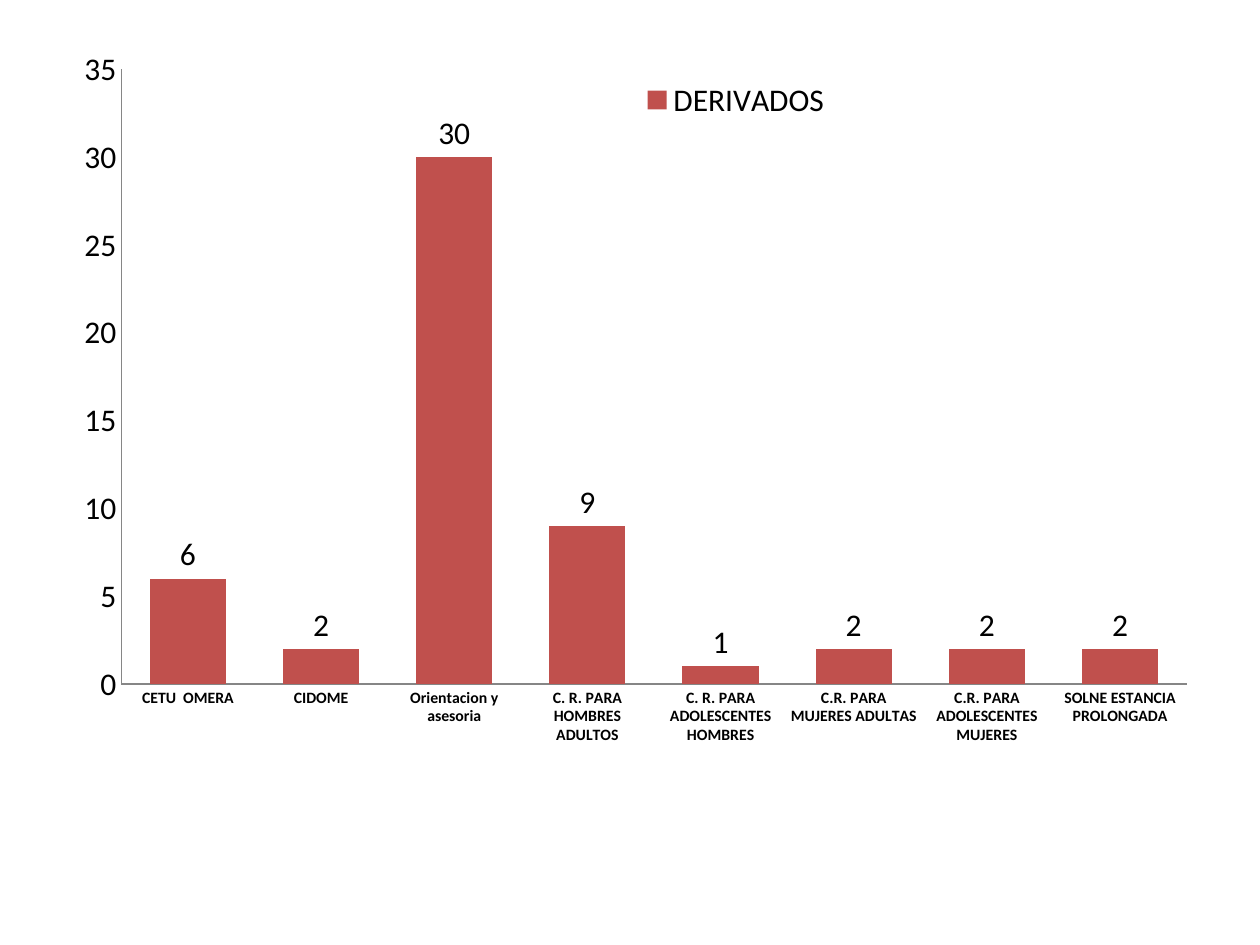
from pptx import Presentation
from pptx.chart.data import CategoryChartData as ChartData
from pptx.dml.color import RGBColor as RGB
from pptx.enum.chart import XL_CHART_TYPE as ChartType
from pptx.enum.chart import XL_LABEL_POSITION as LabelPos
from pptx.enum.chart import XL_LEGEND_POSITION as LegendPos
from pptx.enum.chart import XL_TICK_MARK as TickMark
from pptx.oxml import parse_xml
from pptx.oxml.ns import nsdecls, qn
from pptx.util import Pt

COLORS = {"text": "000000", "bar": "C0504D", "axis": "868686"}

REFERRALS = {
    "CETU  OMERA": 6,
    "CIDOME": 2,
    "Orientacion y asesoria": 30,
    "C. R. PARA HOMBRES ADULTOS": 9,
    "C. R. PARA ADOLESCENTES HOMBRES": 1,
    "C.R. PARA MUJERES ADULTAS": 2,
    "C.R. PARA ADOLESCENTES MUJERES": 2,
    "SOLNE ESTANCIA PROLONGADA": 2,
}


def manual_layout(box, inner=False):
    """Return a c:layout element for x, y, w, h as shares of the chart."""
    target = '<c:layoutTarget val="inner"/>' if inner else ""
    modes = '<c:xMode val="edge"/><c:yMode val="edge"/>'
    sizes = "".join(f'<c:{k} val="{v}"/>' for k, v in zip("xywh", box))
    return parse_xml(f"<c:layout {nsdecls('c')}><c:manualLayout>"
                     f"{target}{modes}{sizes}</c:manualLayout></c:layout>")


class Deck:
    font = "Calibri"
    size = 18

    def __init__(self, width, height):
        self.prs = Presentation()
        self.prs.slide_width, self.prs.slide_height = Pt(width), Pt(height)
        self.slide = None

    def add_slide(self):
        self.slide = self.prs.slides.add_slide(self.prs.slide_layouts[6])

    def style_font(self, font, size, bold=False):
        font.name, font.size, font.bold = self.font, Pt(size), bold
        font.color.rgb = RGB.from_string(COLORS["text"])

    def style_axis(self, axis, size, bold=False):
        axis.has_major_gridlines = False
        axis.major_tick_mark = axis.minor_tick_mark = TickMark.NONE
        axis.format.line.color.rgb = RGB.from_string(COLORS["axis"])
        self.style_font(axis.tick_labels.font, size, bold)

    def place(self, parent, index, box, inner=False):
        for old in parent.findall(qn("c:layout")):
            parent.remove(old)
        parent.insert(index, manual_layout(box, inner))

    def column_chart(self, name, values, box, plot_box, legend_box):
        data = ChartData()
        data.categories = list(values)
        data.add_series(name, list(values.values()))
        chart = self.slide.shapes.add_chart(
            ChartType.COLUMN_CLUSTERED, *map(Pt, box), data).chart
        chart.has_title = False
        self.style_font(chart.font, self.size)

        # Columns and their values
        plot = chart.plots[0]
        plot.gap_width = 75
        plot.vary_by_categories = False
        fill = plot.series[0].format.fill
        fill.solid()
        fill.fore_color.rgb = RGB.from_string(COLORS["bar"])
        plot.has_data_labels = True
        labels = plot.data_labels
        labels.show_value = True
        labels.position = LabelPos.OUTSIDE_END
        self.style_font(labels.font, self.size)

        # Axes
        self.style_axis(chart.category_axis, 9, bold=True)
        self.style_axis(chart.value_axis, self.size)
        chart.value_axis.minimum_scale = 0
        chart.value_axis.maximum_scale = 35
        chart.value_axis.major_unit = 5

        # Legend and plot positions
        chart.has_legend = True
        legend = chart.legend
        legend.position = LegendPos.BOTTOM
        legend.include_in_layout = False
        self.style_font(legend.font, self.size)
        legend_xml = chart.element.find(".//" + qn("c:legend"))
        self.place(legend_xml, 1, legend_box)
        plot_xml = chart.element.find(".//" + qn("c:plotArea"))
        self.place(plot_xml, 0, plot_box, inner=True)


def main():
    deck = Deck(720, 540)
    deck.add_slide()
    deck.column_chart("DERIVADOS", REFERRALS,
                      box=(22.5, 19.5, 669, 502),
                      plot_box=(0.07, 0.04, 0.91, 0.7),
                      legend_box=(0.51, 0.05, 0.17, 0.05))
    deck.prs.save("out.pptx")


if __name__ == "__main__":
    main()
